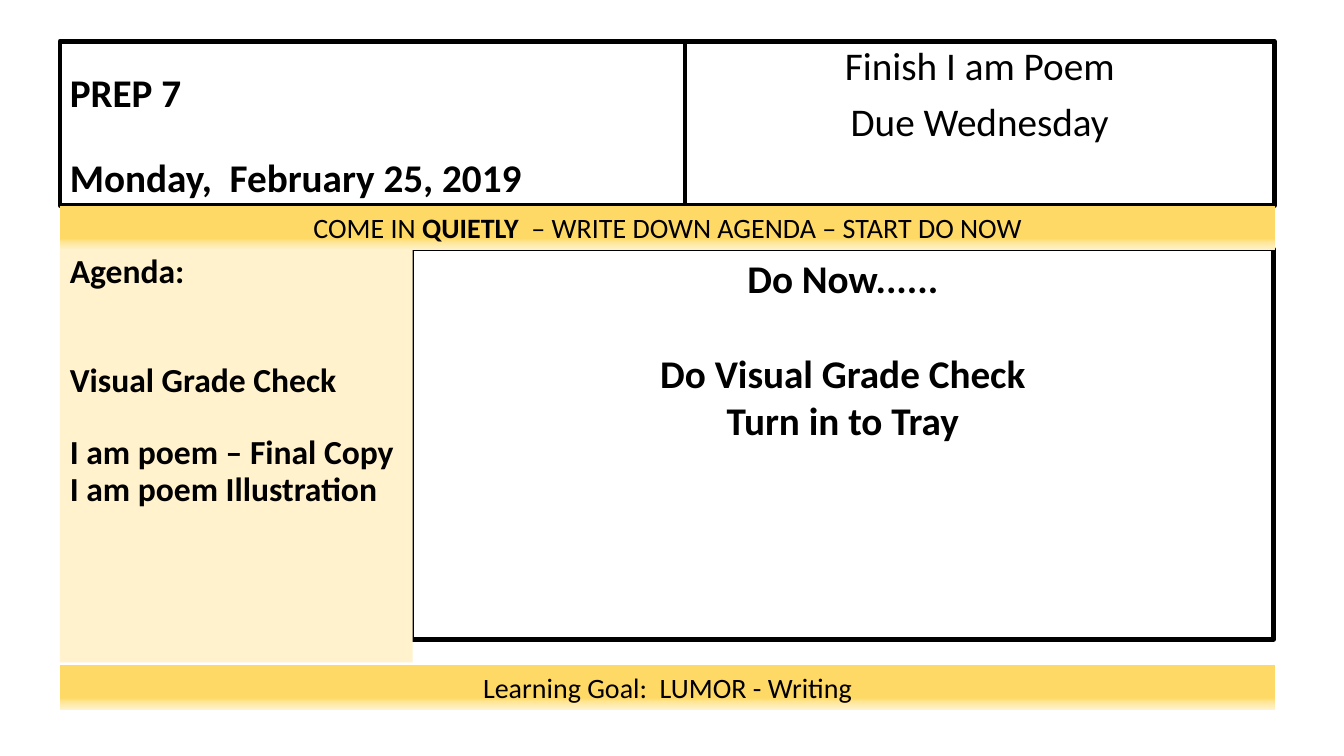
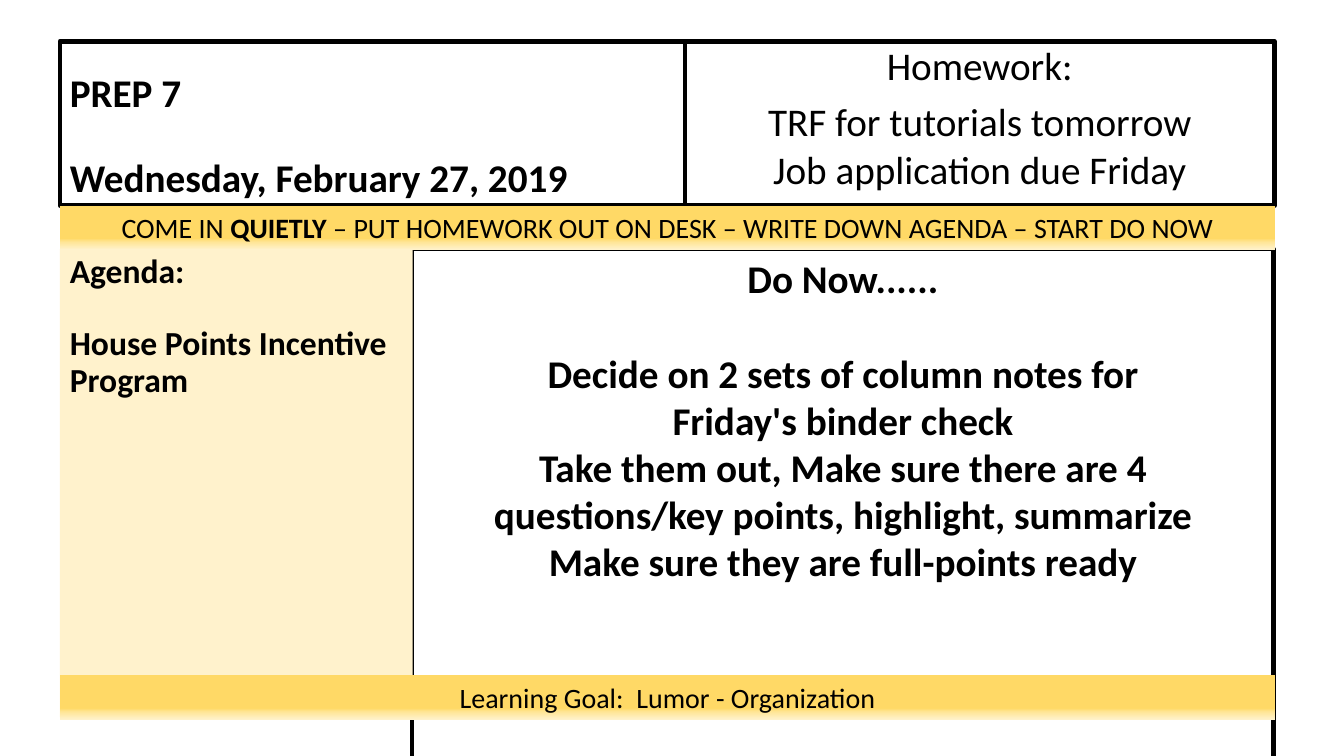
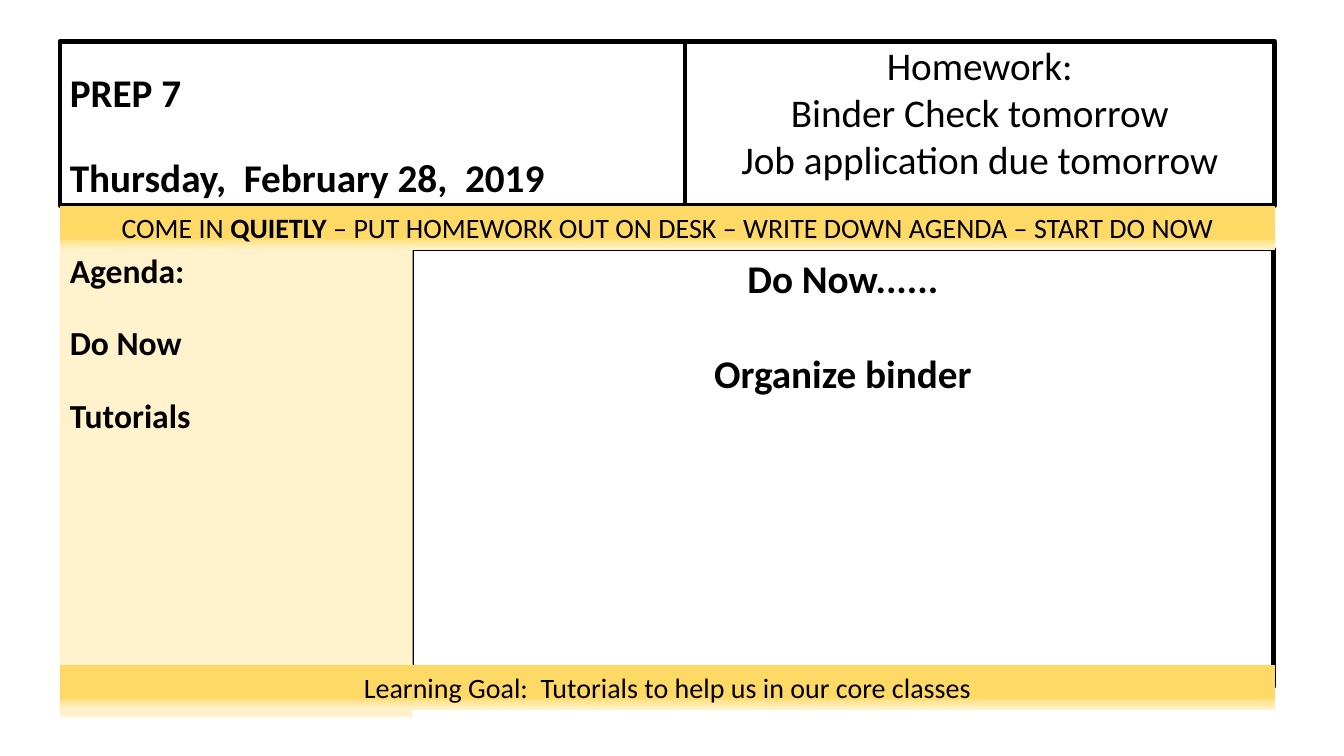
"""Builds three daily class agenda slides."""
from lxml import etree
from pptx import Presentation
from pptx.dml.color import RGBColor
from pptx.enum.shapes import MSO_SHAPE
from pptx.enum.text import MSO_ANCHOR, PP_ALIGN
from pptx.oxml.ns import qn
from pptx.util import Cm, Pt

RECT = MSO_SHAPE.RECTANGLE
LEFT, CENTER = PP_ALIGN.LEFT, PP_ALIGN.CENTER
TOP, BOTTOM = MSO_ANCHOR.TOP, MSO_ANCHOR.BOTTOM
FONT = "Calibri"
COLORS = {"ink": "000000", "gold": "FFD966", "sand": "FFE699", "cream": "FFF2CC"}
BAND_STOPS = [(0, "gold"), (74, "gold"), (83, "sand"), (100, "cream")]
EDGE, BAND_W, BAND_H = 1.51, 30.63, 1.12
TOP_Y, TOP_H, TITLE_W = 1.04, 4.14, 15.75
BODY_Y = 6.28
TIGHT = 0.9


def rgb(name):
    return RGBColor.from_string(COLORS[name])


def write(tf, lines, size=28, bold=False, align=CENTER, anchor=TOP, spacing=1.0):
    """Fill a frame with (text, space before[, spacing]) lines; *stars* switch bold."""
    tf.word_wrap = True
    tf.vertical_anchor = anchor
    for i, (text, gap, *own) in enumerate(lines):
        p = tf.paragraphs[0] if i == 0 else tf.add_paragraph()
        p.alignment, p.space_before = align, Pt(gap)
        p.line_spacing = own[0] if own else spacing
        for j, part in enumerate(text.split("*")):
            r = p.add_run()
            r.text = part
            r.font.name, r.font.size = FONT, Pt(size)
            r.font.bold = bold != (j % 2 == 1)
            r.font.color.rgb = rgb("ink")


class Deck:
    def __init__(self):
        self.prs = Presentation()
        self.prs.slide_width, self.prs.slide_height = Cm(33.87), Cm(19.05)
        self.s = None

    def slide(self):
        self.s = self.prs.slides.add_slide(self.prs.slide_layouts[6])

    def rect(self, x, y, w, h):
        sp = self.s.shapes.add_shape(RECT, Cm(x), Cm(y), Cm(w), Cm(h))
        sp.shadow.inherit = False
        sp.fill.background()
        sp.line.fill.background()
        return sp

    def frame(self, x, y, w, h, lines, **fmt):
        sp = self.rect(x, y, w, h)
        sp.line.color.rgb = rgb("ink")
        sp.line.width = Pt(3.25)
        write(sp.text_frame, lines, **fmt)

    def panel(self, x, y, w, h, lines, **fmt):
        sp = self.rect(x, y, w, h)
        sp.fill.solid()
        sp.fill.fore_color.rgb = rgb("cream")
        write(sp.text_frame, lines, **fmt)

    def band(self, y, text):
        sp = self.rect(EDGE, y, BAND_W, BAND_H)
        sp.fill.gradient()
        sp.fill.gradient_angle = 270
        stops = next(sp.element.iter(qn("a:gsLst")))
        for gs in list(stops):
            stops.remove(gs)
        for pos, color in BAND_STOPS:
            gs = etree.SubElement(stops, qn("a:gs"), pos=str(pos * 1000))
            etree.SubElement(gs, qn("a:srgbClr"), val=COLORS[color])
        write(sp.text_frame, [(text, 0)], size=20)

    def day(self, date, homework, do_now, banner, agenda, goal,
            do_now_h, agenda_h, goal_y=16.76):
        self.slide()
        self.frame(EDGE, TOP_Y, TITLE_W, TOP_H, [("PREP 7", 0), (date, 30)],
                   bold=True, align=LEFT, anchor=BOTTOM, spacing=TIGHT)
        self.frame(EDGE + TITLE_W, TOP_Y, 14.86, TOP_H, homework)
        self.frame(10.38, BODY_Y, 21.72, do_now_h,
                   [("Do Now......", 0)] + do_now, bold=True)
        self.band(TOP_Y + TOP_H, banner)
        self.panel(EDGE, BODY_Y, 8.89, agenda_h, [("Agenda:", 0)] + agenda,
                   size=24, bold=True, align=LEFT, spacing=TIGHT)
        self.band(goal_y, "Learning Goal:  " + goal)


def main():
    homework_banner = ("COME IN *QUIETLY* – PUT HOMEWORK OUT ON DESK"
                       " – WRITE DOWN AGENDA – START DO NOW")
    deck = Deck()
    deck.day(
        date="Monday,  February 25, 2019",
        homework=[("Finish I am Poem", 0, TIGHT), ("Due Wednesday", 10, TIGHT)],
        do_now=[("Do Visual Grade Check", 34), ("Turn in to Tray", 0)],
        banner="COME IN *QUIETLY*  – WRITE DOWN AGENDA – START DO NOW",
        agenda=[("Visual Grade Check", 52), ("I am poem – Final Copy", 26),
                ("I am poem Illustration", 0)],
        goal="LUMOR - Writing", do_now_h=9.83, agenda_h=10.41)
    deck.day(
        date="Wednesday, February 27, 2019",
        homework=[("Homework:", 0, TIGHT),
                  ("TRF for tutorials tomorrow", 10, TIGHT),
                  ("Job application due Friday", 0)],
        do_now=[("Decide on 2 sets of column notes for", 34),
                ("Friday's binder check", 0),
                ("Take them out, Make sure there are 4 questions/key points,"
                 " highlight, summarize", 0),
                ("Make sure they are full-points ready", 0)],
        banner=homework_banner,
        agenda=[("House Points Incentive Program", 26)],
        goal="Lumor - Organization", do_now_h=19.41, agenda_h=11.79,
        goal_y=17.02)
    deck.day(
        date="Thursday,  February 28,  2019",
        homework=[("Homework:", 0, TIGHT), ("Binder Check tomorrow", 0),
                  ("Job application due tomorrow", 0)],
        do_now=[("Organize binder", 34)],
        banner=homework_banner,
        agenda=[("Do Now", 26), ("Tutorials", 26)],
        goal="Tutorials to help us in our core classes",
        do_now_h=11.02, agenda_h=11.79)
    deck.prs.save("out.pptx")


if __name__ == "__main__":
    main()
